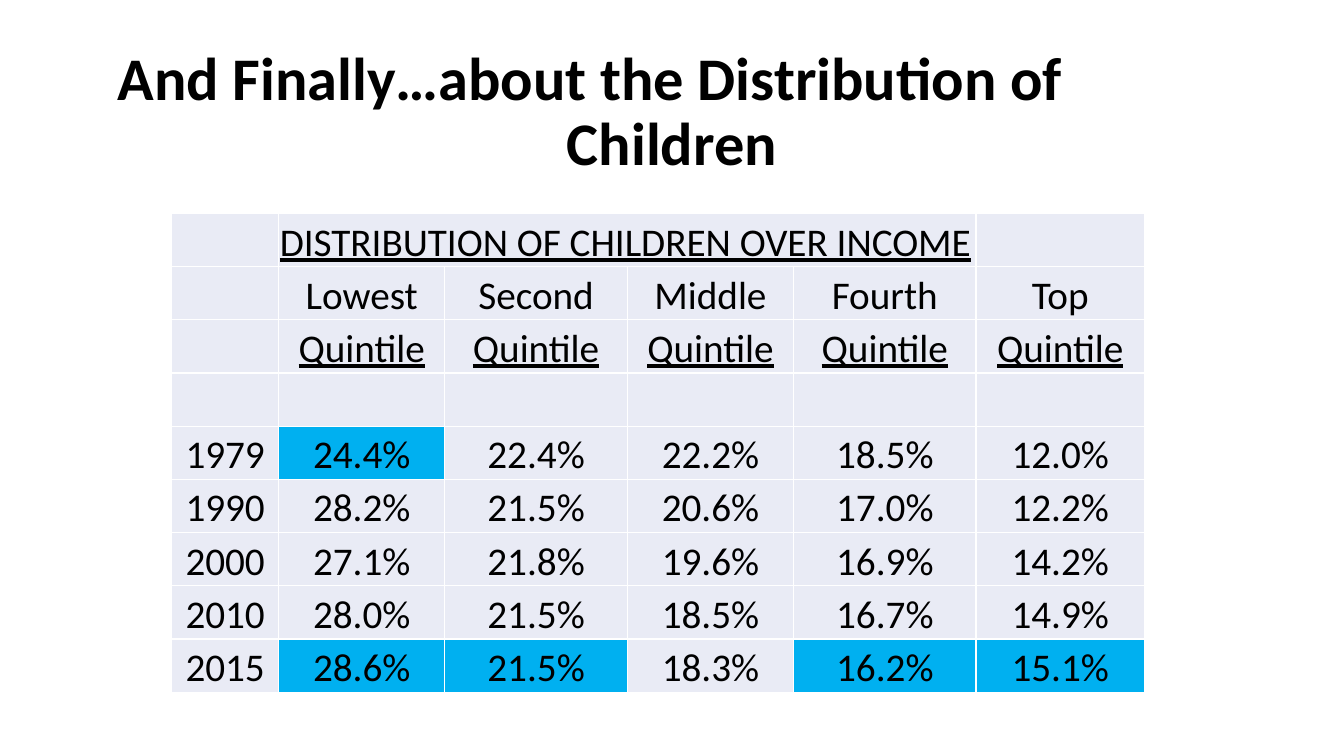
from lxml import etree
from pptx import Presentation
from pptx.dml.color import RGBColor
from pptx.enum.text import MSO_ANCHOR, MSO_AUTO_SIZE, PP_ALIGN
from pptx.oxml.ns import qn
from pptx.util import Cm, Pt

CENTER, LEFT = PP_ALIGN.CENTER, PP_ALIGN.LEFT
MIDDLE, BOTTOM = MSO_ANCHOR.MIDDLE, MSO_ANCHOR.BOTTOM
NO_AUTOFIT = MSO_AUTO_SIZE.NONE
TITLE_ONLY = 5

FONT = "Calibri"
COLORS = {"text": "000000", "cell": "E9EBF5", "highlight": "00B0F0", "border": "FFFFFF"}

TITLE = "And Finally…about the Distribution of \t\tChildren"
HEADING = "DISTRIBUTION OF CHILDREN OVER INCOME"
QUINTILES = ["Lowest", "Second", "Middle", "Fourth", "Top"]
SHARES = {
    "1979": ["24.4%", "22.4%", "22.2%", "18.5%", "12.0%"],
    "1990": ["28.2%", "21.5%", "20.6%", "17.0%", "12.2%"],
    "2000": ["27.1%", "21.8%", "19.6%", "16.9%", "14.2%"],
    "2010": ["28.0%", "21.5%", "18.5%", "16.7%", "14.9%"],
    "2015": ["28.6%", "21.5%", "18.3%", "16.2%", "15.1%"],
}
HIGHLIGHTS = {
    ("1979", "Lowest"), ("2015", "Lowest"), ("2015", "Second"),
    ("2015", "Fourth"), ("2015", "Top"),
}
COLUMN_WIDTHS = [2.69, 4.19, 4.6, 4.19, 4.6, 4.24]
ROW_HEIGHT = 1.34


def style_paragraph(paragraph, size, align, bold=False, underline=False):
    paragraph.alignment = align
    font = paragraph.font
    font.name, font.size = FONT, Pt(size)
    font.bold, font.underline = bold, underline
    font.color.rgb = RGBColor.from_string(COLORS["text"])


def add_title(slide):
    title = slide.shapes.title
    title.left, title.top, title.width, title.height = Cm(2.33), Cm(1.01), Cm(29.21), Cm(3.68)
    frame = title.text_frame
    frame.auto_size = NO_AUTOFIT
    frame.word_wrap = True
    frame.vertical_anchor = MIDDLE
    frame.text = TITLE
    paragraph = frame.paragraphs[0]
    paragraph.line_spacing = 0.9
    style_paragraph(paragraph, 43.2, CENTER, bold=True)
    paragraph._p.get_or_add_pPr().set("defTabSz", str(Cm(2.54)))


def add_borders(cell):
    properties = cell._tc.get_or_add_tcPr()
    for position, side in enumerate(("lnL", "lnR", "lnT", "lnB")):
        line = etree.Element(qn(f"a:{side}"), w=str(Pt(1)))
        fill = etree.SubElement(line, qn("a:solidFill"))
        etree.SubElement(fill, qn("a:srgbClr"), val=COLORS["border"])
        properties.insert(position, line)


def fill_cell(cell, text, color="cell", align=CENTER, underline=False):
    cell.fill.solid()
    cell.fill.fore_color.rgb = RGBColor.from_string(COLORS[color])
    add_borders(cell)
    cell.vertical_anchor = BOTTOM
    cell.margin_left = cell.margin_right = cell.margin_top = Cm(0.03)
    cell.margin_bottom = 0
    if text:
        cell.text = text
        style_paragraph(cell.text_frame.paragraphs[0], 28, align, underline=underline)


def add_share_table(slide):
    blank = [""] * len(COLUMN_WIDTHS)
    rows = [
        ["", HEADING, *blank[2:]],
        ["", *QUINTILES],
        ["", *["Quintile"] * len(QUINTILES)],
        blank,
        *[[year, *shares] for year, shares in SHARES.items()],
    ]
    table = slide.shapes.add_table(
        len(rows), len(COLUMN_WIDTHS), Cm(4.33), Cm(5.38),
        Cm(sum(COLUMN_WIDTHS)), Cm(ROW_HEIGHT * len(rows)),
    ).table
    table.first_row = table.horz_banding = False
    for column, width in zip(table.columns, COLUMN_WIDTHS):
        column.width = Cm(width)
    for row_index, texts in enumerate(rows):
        table.rows[row_index].height = Cm(ROW_HEIGHT)
        for column_index, text in enumerate(texts):
            marked = (texts[0], rows[1][column_index]) in HIGHLIGHTS
            fill_cell(
                table.cell(row_index, column_index), text,
                color="highlight" if marked else "cell",
                align=LEFT if text == HEADING else CENTER,
                underline=text in (HEADING, "Quintile"),
            )
    table.cell(0, 1).merge(table.cell(0, 4))


def main():
    presentation = Presentation()
    presentation.slide_width, presentation.slide_height = Cm(33.87), Cm(19.05)
    slide = presentation.slides.add_slide(presentation.slide_layouts[TITLE_ONLY])
    add_title(slide)
    add_share_table(slide)
    presentation.save("out.pptx")


if __name__ == "__main__":
    main()
